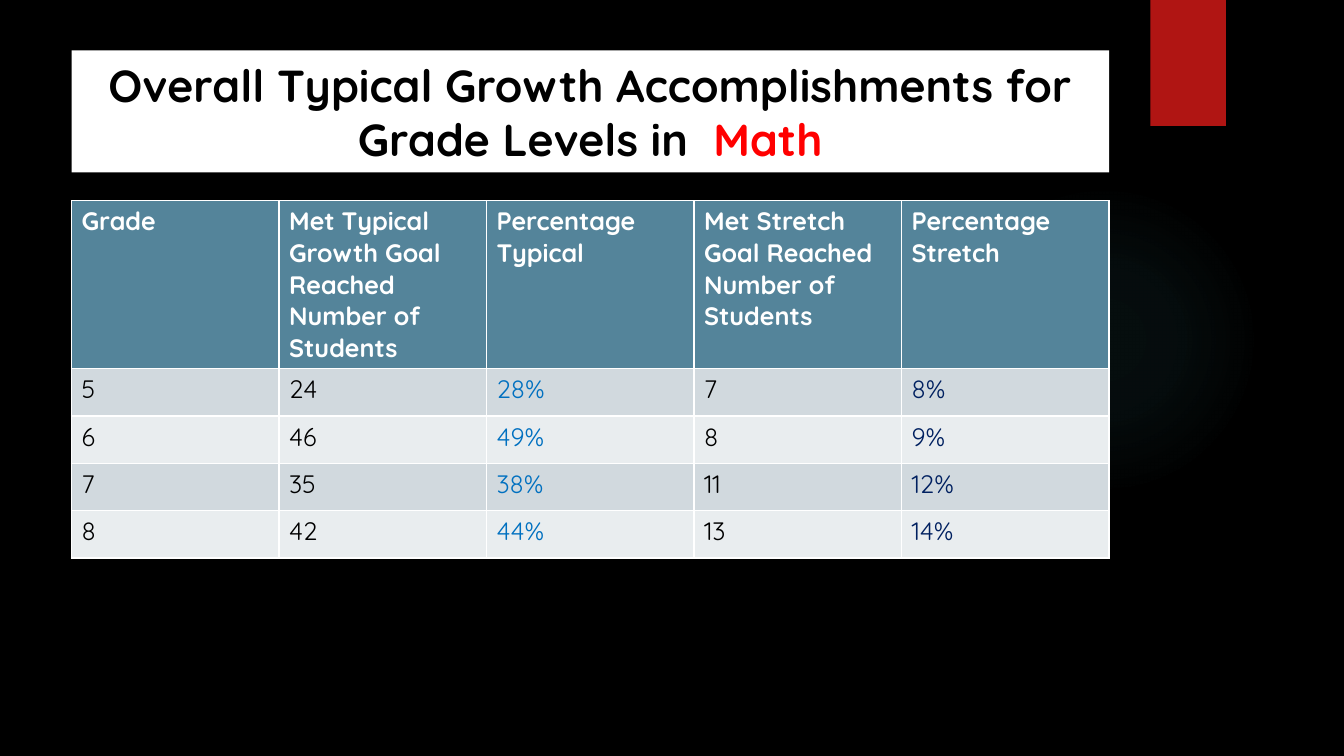
"""Build the slide on typical and stretch growth in math by grade."""
from pptx import Presentation
from pptx import util as u
from pptx.dml.color import RGBColor
from pptx.enum import shapes, text
from pptx.oxml import parse_xml
from pptx.oxml.ns import nsdecls

TITLE = [("Overall Typical Growth Accomplishments for Grade Levels in  ", "ink"),
         ("Math", "accent")]
HEAD = ["Grade", "Met Typical Growth Goal Reached\nNumber of Students",
        "Percentage\nTypical", "Met Stretch Goal Reached\nNumber of Students",
        "Percentage\nStretch"]
ROWS = [("5", "24", "28%", "7", "8%"),
        ("6", "46", "49%", "8", "9%"),
        ("7", "35", "38%", "11", "12%"),
        ("8", "42", "44%", "13", "14%")]
TONES = ["ink", "ink", "typical", "ink", "stretch"]
THEME = {"font": "Quicksand", "title": 32, "cell": 18, "back": "000000",
         "ink": "000000", "paper": "FFFFFF", "accent": "FF0000",
         "typical": "0070C0", "stretch": "002060", "head": "54849A",
         "bands": ["D1D9DE", "E9EDEF"], "tab": "B01513", "glow": "50B9C1"}
WIDE, HIGH = 13.33, 7.5
LEFT, SPAN = 0.71, 10.29
HEAD_H, ROW_H = 1.51, 0.47
GLOW = [(0, 7), (36, 6), (69, 0)]


def box(*sides):
    return [u.Inches(side) for side in sides]


def paint(fill, tone):
    fill.solid()
    fill.fore_color.rgb = RGBColor.from_string(tone)


def style(run, size, tone, bold):
    run.font.name = THEME["font"]
    run.font.size = u.Pt(size)
    run.font.bold = bold
    run.font.color.rgb = RGBColor.from_string(tone)


def add_mark(slide, kind, sides, tone):
    mark = slide.shapes.add_shape(kind, *box(*sides))
    mark.shadow.inherit = False
    mark.line.fill.background()
    paint(mark.fill, tone)
    return mark


def add_glow(slide):
    size = 3.08
    mark = add_mark(slide, shapes.MSO_SHAPE.OVAL, (9.41, 1.83, size, size), THEME["glow"])
    stops = "".join(
        f'<a:gs pos="{at * 1000}"><a:srgbClr val="{THEME["glow"]}">'
        f'<a:alpha val="{alpha * 1000}"/></a:srgbClr></a:gs>' for at, alpha in GLOW)
    fade = parse_xml(
        f'<a:gradFill {nsdecls("a")} rotWithShape="1"><a:gsLst>{stops}</a:gsLst>'
        '<a:path path="circle"><a:fillToRect l="50000" t="50000" r="50000" b="50000"/>'
        '</a:path></a:gradFill>')
    props = mark.element.spPr
    props.replace(props.find("{*}solidFill"), fade)


def add_title(slide):
    title = slide.shapes.title
    title.left, title.top, title.width, title.height = box(LEFT, 0.5, SPAN, 1.21)
    paint(title.fill, THEME["paper"])
    frame = title.text_frame
    frame.auto_size = text.MSO_AUTO_SIZE.NONE
    frame.vertical_anchor = text.MSO_ANCHOR.MIDDLE
    para = frame.paragraphs[0]
    para.alignment = text.PP_ALIGN.CENTER
    for words, tone in TITLE:
        run = para.add_run()
        run.text = words
        style(run, THEME["title"], THEME[tone], True)


def add_grid(slide):
    count = len(ROWS)
    sides = box(LEFT, 1.99, SPAN, HEAD_H + count * ROW_H)
    grid = slide.shapes.add_table(count + 1, len(HEAD), *sides).table
    for r, row in enumerate([HEAD, *ROWS]):
        grid.rows[r].height = u.Inches(ROW_H if r else HEAD_H)
        for c, words in enumerate(row):
            cell = grid.cell(r, c)
            cell.text_frame.text = words
            paint(cell.fill, THEME["bands"][(r - 1) % 2] if r else THEME["head"])
            tone = THEME[TONES[c] if r else "paper"]
            for para in cell.text_frame.paragraphs:
                style(para.runs[0], THEME["cell"], tone, r == 0)


def main():
    deck = Presentation()
    deck.slide_width, deck.slide_height = box(WIDE, HIGH)
    slide = deck.slides.add_slide(deck.slide_layouts[5])
    paint(slide.background.fill, THEME["back"])
    add_glow(slide)
    add_mark(slide, shapes.MSO_SHAPE.RECTANGLE, (11.41, 0, 0.75, HIGH / 6), THEME["tab"])
    add_title(slide)
    add_grid(slide)
    deck.save("out.pptx")


if __name__ == "__main__":
    main()
